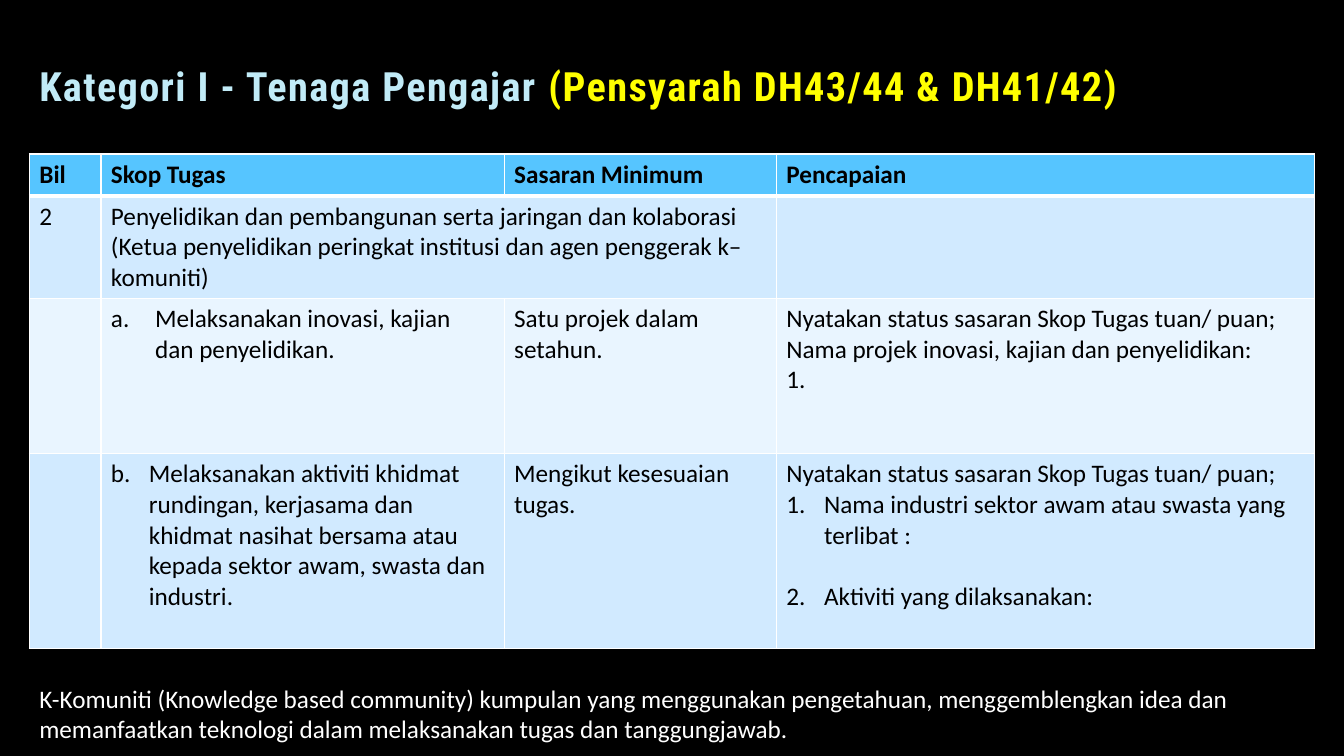
from lxml.etree import SubElement
from pptx import Presentation
from pptx.dml.color import RGBColor
from pptx.enum.text import MSO_ANCHOR as Anchor
from pptx.oxml.ns import qn
from pptx.util import Pt

BLACK = RGBColor(0x00, 0x00, 0x00)
WHITE = RGBColor(0xFF, 0xFF, 0xFF)
HEADER = RGBColor(0x56, 0xC5, 0xFF)
BAND = RGBColor(0xD1, 0xEA, 0xFF)
LIGHT = RGBColor(0xE9, 0xF5, 0xFF)
PALE = RGBColor(0xC1, 0xEB, 0xF7)
YELLOW = RGBColor(0xFF, 0xFF, 0x00)
OUTLINE = RGBColor(0x40, 0x40, 0x40)

COLS = [51.1, 288, 194.4, 384.5]
ROWS = [30, 72.8, 110.9, 139]
FILLS = [HEADER, BAND, LIGHT, BAND]
STATUS = "Nyatakan status sasaran Skop Tugas tuan/ puan;"


def item(text, scheme="arabicPeriod", start=1, indent=27, before=0):
    return dict(text=text, scheme=scheme, start=start, indent=indent, before=before)


TASKS = [
    [["Bil"], ["Skop Tugas"], ["Sasaran Minimum"], ["Pencapaian"]],
    [["2"], ["Penyelidikan dan pembangunan serta jaringan dan kolaborasi "
             "(Ketua penyelidikan peringkat institusi dan agen penggerak k– komuniti)"], [], []],
    [[], [item("Melaksanakan inovasi, kajian dan penyelidikan.", "alphaLcPeriod", indent=31.5)],
     ["Satu projek dalam setahun."],
     [STATUS, "Nama projek inovasi, kajian dan penyelidikan:", "1."]],
    [[], [item("Melaksanakan aktiviti khidmat rundingan, kerjasama dan khidmat nasihat "
               "bersama atau kepada sektor awam, swasta dan industri.", "alphaLcPeriod", start=2)],
     ["Mengikut kesesuaian tugas."],
     [STATUS, item("Nama industri sektor awam atau swasta yang terlibat :"),
      item("Aktiviti yang dilaksanakan:", before=22)]],
]


class Deck:
    font, size = "Calibri", 18

    def __init__(self, width, height):
        self.prs = Presentation()
        self.prs.slide_width, self.prs.slide_height = Pt(width), Pt(height)
        self.s = self.prs.slides.add_slide(self.prs.slide_layouts[6])

    def background(self, color):
        fill = self.s.background.fill
        fill.solid()
        fill.fore_color.rgb = color

    def run(self, p, text, color, bold=False, size=None, font=None):
        r = p.add_run()
        r.text = text
        r.font.name, r.font.size = font or self.font, Pt(size or self.size)
        r.font.bold, r.font.color.rgb = bold, color
        return r

    def box(self, x, y, w, h, anchor=Anchor.TOP):
        tf = self.s.shapes.add_textbox(Pt(x), Pt(y), Pt(w), Pt(h)).text_frame
        tf.word_wrap, tf.vertical_anchor = True, anchor
        return tf.paragraphs[0]

    def line(self, parent, tag, color, width, alpha=None):
        ln = SubElement(parent, qn(tag), w=str(Pt(width)))
        clr = SubElement(SubElement(ln, qn("a:solidFill")), qn("a:srgbClr"), val=str(color))
        if alpha:
            SubElement(clr, qn("a:alpha"), val=str(alpha * 1000))
        SubElement(ln, qn("a:prstDash"), val="solid")
        return ln

    def title(self, x, y, w, h, parts):
        p = self.box(x, y, w, h, Anchor.BOTTOM)
        p.line_spacing = 0.9
        for text, color in parts:
            r = self.run(p, text, color, True, 28.8, "Roboto Condensed")
            rPr = r.font._element
            rPr.set("spc", "100")
            rPr.insert(0, self.line(rPr, "a:ln", OUTLINE, 0.75, alpha=10))

    def text(self, x, y, w, h, text, color):
        self.run(self.box(x, y, w, h), text, color)

    def numbered(self, p, entry):
        pPr = p._p.get_or_add_pPr()
        pPr.set("marL", str(Pt(entry["indent"])))
        pPr.set("indent", str(-Pt(entry["indent"])))
        if entry["before"]:
            p.space_before = Pt(entry["before"])
        num = SubElement(pPr, qn("a:buAutoNum"), type=entry["scheme"])
        if entry["start"] > 1:
            num.set("startAt", str(entry["start"]))

    def cell(self, cell, entries, fill, top, bottom, bold):
        tcPr = cell._tc.get_or_add_tcPr()
        for side, width in zip("LRTB", (1, 1, top, bottom)):
            self.line(tcPr, f"a:ln{side}", WHITE, width)
        cell.fill.solid()
        cell.fill.fore_color.rgb = fill
        cell.vertical_anchor = Anchor.MIDDLE if bold else Anchor.TOP
        tf = cell.text_frame
        for i, entry in enumerate(entries):
            p = tf.add_paragraph() if i else tf.paragraphs[0]
            text = entry
            if isinstance(entry, dict):
                self.numbered(p, entry)
                text = entry["text"]
            self.run(p, text, BLACK, bold)

    def table(self, x, y, cols, rows, data, fills):
        frame = self.s.shapes.add_table(len(rows), len(cols), Pt(x), Pt(y),
                                        Pt(sum(cols)), Pt(sum(rows)))
        tbl = frame.table
        tbl.first_row = tbl.horz_banding = False
        for col, width in zip(tbl.columns, cols):
            col.width = Pt(width)
        for i, height in enumerate(rows):
            tbl.rows[i].height = Pt(height)
            for j, entries in enumerate(data[i]):
                self.cell(tbl.cell(i, j), entries, fills[i],
                          3 if i == 1 else 1, 3 if i == 0 else 1, i == 0)
        return tbl


def main():
    deck = Deck(960, 540)
    deck.background(BLACK)
    tbl = deck.table(21, 110, COLS, ROWS, TASKS, FILLS)
    tbl.cell(1, 1).merge(tbl.cell(1, 2))
    deck.title(21, 33.8, 818.6, 48.2, [("Kategori I - Tenaga Pengajar ", PALE),
                                       ("(Pensyarah DH43/44 & DH41/42)", YELLOW)])
    deck.text(21, 484.6, 894.2, 51,
              "K-Komuniti (Knowledge based community) kumpulan yang menggunakan pengetahuan, "
              "menggemblengkan idea dan memanfaatkan teknologi dalam melaksanakan tugas dan "
              "tanggungjawab.", WHITE)
    deck.prs.save("out.pptx")


if __name__ == "__main__":
    main()
